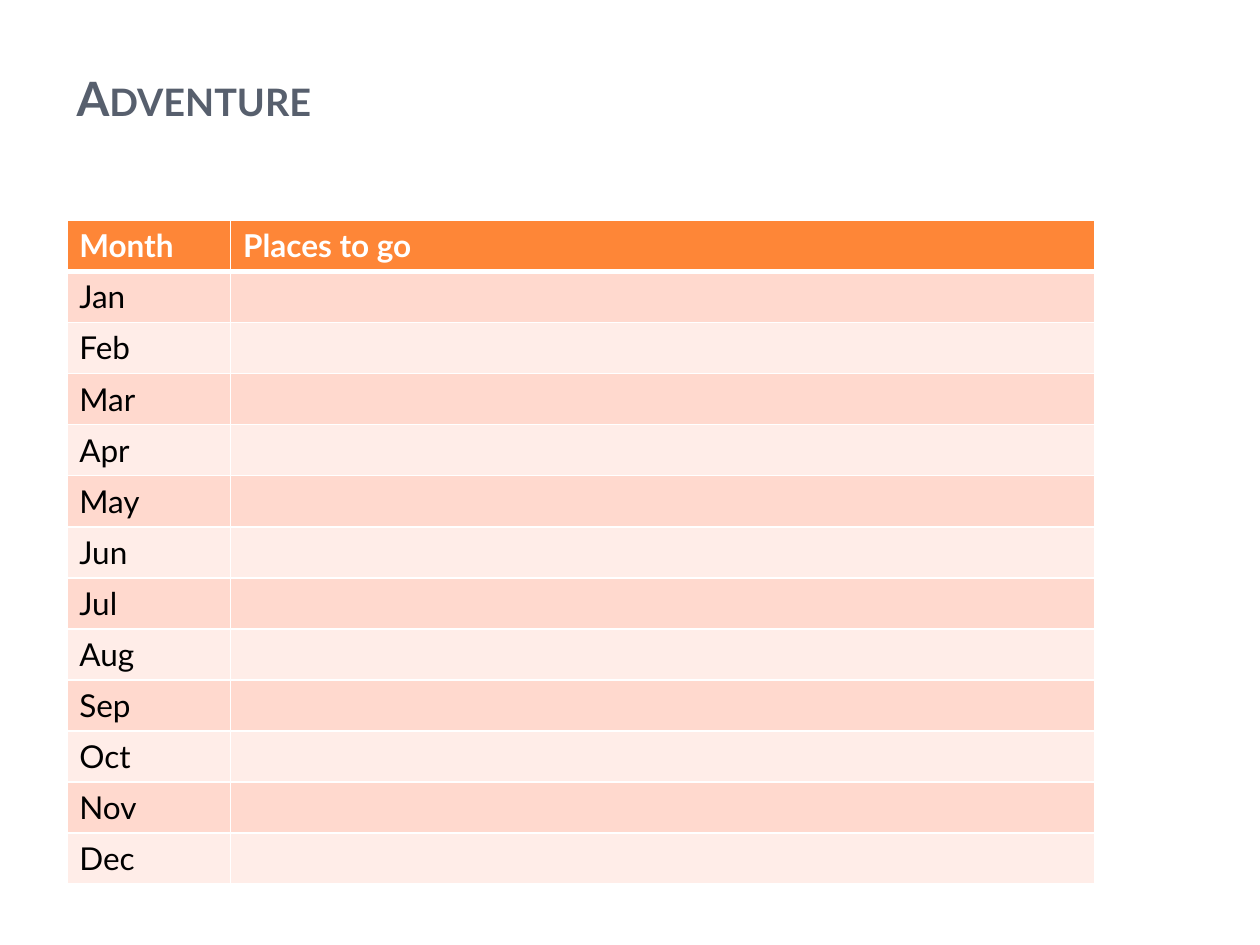
"""Build the Adventure slide: a title above a month-by-month table of places to go."""
from lxml import etree
from pptx import Presentation
from pptx import util as u
from pptx.dml.color import RGBColor
from pptx.enum import text
from pptx.oxml.ns import qn

COLORS = {
    "title": "575F6D",
    "header": "FE8637",
    "dark_band": "FFD9CE",
    "light_band": "FFEDE8",
    "white": "FFFFFF",
    "black": "000000",
}
MONTHS = "Jan Feb Mar Apr May Jun Jul Aug Sep Oct Nov Dec".split()


class SlideBuilder:
    """Hold the style and the current slide."""

    font_name = "Lato"

    def __init__(self, deck):
        """Add a blank page to the deck."""
        self.page = deck.slides.add_slide(deck.slide_layouts[6])

    def color(self, name):
        """Return the named colour."""
        return RGBColor.from_string(COLORS[name])

    def add_span(self, frame, words, size, color, bold):
        """Add one styled span to a text frame."""
        span = frame.paragraphs[0].add_run()
        span.text = words
        style = {"name": self.font_name, "size": u.Pt(size), "bold": bold}
        for key, value in style.items():
            setattr(span.font, key, value)
        span.font.color.rgb = self.color(color)
        return span

    def title(self, words, left, top, width, height):
        """Add the title in small capitals."""
        box = self.page.shapes.add_textbox(*map(u.Inches, (left, top, width, height)))
        frame = box.text_frame
        layout = {"word_wrap": True, "vertical_anchor": text.MSO_ANCHOR.TOP}
        for key, value in layout.items():
            setattr(frame, key, value)
        span = self.add_span(frame, words, 27, "title", True)
        span._r.get_or_add_rPr().set("cap", "small")

    def border(self, cell, side, points):
        """Draw one white cell border."""
        properties = cell._tc.get_or_add_tcPr()
        line = etree.SubElement(properties, qn(f"a:ln{side}"), w=str(u.Pt(points)))
        fill = etree.SubElement(line, qn("a:solidFill"))
        etree.SubElement(fill, qn("a:srgbClr"), val=COLORS["white"])

    def cell(self, cell, words, fill, color, bold, edges):
        """Style one table cell and add its words."""
        for side, points in edges.items():
            self.border(cell, side, points)
        cell.fill.solid()
        cell.fill.fore_color.rgb = self.color(fill)
        if words:
            self.add_span(cell.text_frame, words, 18, color, bold)

    def table(self, rows, left, top, widths, height):
        """Add a banded table whose first row is the header."""
        frame = self.page.shapes.add_table(
            len(rows), len(widths),
            *map(u.Inches, (left, top, sum(widths), height)))
        table = frame.table
        table.horz_banding = False
        for column, width in zip(table.columns, widths):
            column.width = u.Inches(width)
        for index, values in enumerate(rows):
            header = index == 0
            band = "dark_band" if index % 2 else "light_band"
            edges = {"L": 1, "R": 1, "T": 3 if index == 1 else 1, "B": 3 if header else 1}
            for cell, words in zip(table.rows[index].cells, values):
                self.cell(cell, words, "header" if header else band,
                          "white" if header else "black", header, edges)


def main():
    """Build and save the deck."""
    deck = Presentation()
    deck.slide_width, deck.slide_height = u.Inches(10), u.Inches(7.5)
    builder = SlideBuilder(deck)
    builder.title("Adventure", 0.51, 0.5, 8.17, 0.45)
    rows = [("Month", "Places to go")] + [(month, "") for month in MONTHS]
    builder.table(rows, 0.53, 1.75, (1.3, 6.86), 5.27)
    deck.save("out.pptx")


if __name__ == "__main__":
    main()
